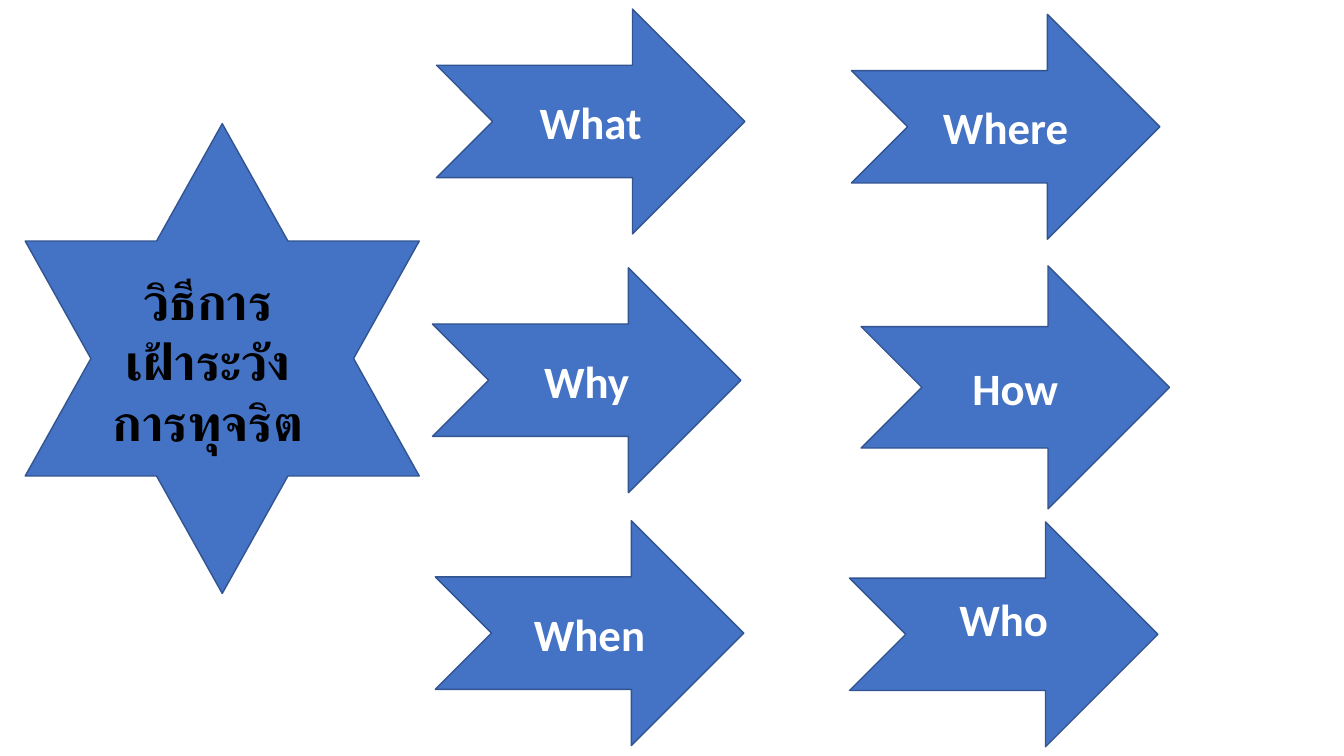
import pptx
import pptx.util
import pptx.dml.color
import pptx.enum.shapes
import pptx.enum.text
from dataclasses import dataclass

Pt = pptx.util.Pt
RGB = pptx.dml.color.RGBColor
Preset = pptx.enum.shapes.MSO_SHAPE
Align = pptx.enum.text.PP_ALIGN
Anchor = pptx.enum.text.MSO_ANCHOR


@dataclass(frozen=True)
class Theme:
    fill: RGB = RGB(0x44, 0x72, 0xC4)
    outline: RGB = RGB(0x32, 0x54, 0x91)
    topic: RGB = RGB(0, 0, 0)
    question: RGB = RGB(255, 255, 255)
    font: str = "Calibri"
    topic_size: float = 36
    question_size: float = 32
    line_width: float = 1


THEME = Theme()
ARROW_WIDTH, ARROW_HEIGHT = 220.3, 160.6
TOPIC_LINES = ["วิธีการ", "เฝ้าระวัง", "การทุจริต"]
STAR_BOX = (18, 88.3, 281.5, 335.6)
QUESTIONS = [
    ("When", 311, 372, ARROW_HEIGHT, 3.6),
    ("What", 311.8, 6.5, ARROW_HEIGHT, 3.6),
    ("Why", 308.9, 191.3, ARROW_HEIGHT, 3.6),
    ("Where", 608.2, 10.3, ARROW_HEIGHT, 3.6),
    ("How", 615.1, 189.9, 173.5, 3.6),
    ("Who", 606.8, 372.8, ARROW_HEIGHT, 25.6),
]


def apply(target, values):
    for attribute, value in values.items():
        setattr(target, attribute, value)


def draw_outline(slide, preset, box):
    figure = slide.shapes.add_shape(preset, *map(Pt, box))
    figure.shadow.inherit = False
    figure.fill.solid()
    figure.fill.fore_color.rgb = THEME.fill
    figure.line.color.rgb = THEME.outline
    figure.line.width = Pt(THEME.line_width)
    return figure


def write_lines(frame, lines, size, color):
    for index, line in enumerate(lines):
        paragraph = frame.add_paragraph() if index else frame.paragraphs[0]
        paragraph.alignment = Align.CENTER
        run = paragraph.add_run()
        run.text = line
        apply(run.font, {"name": THEME.font, "size": Pt(size), "bold": True})
        run.font.color.rgb = color


def draw_topic(slide, box):
    left, top, width, height = box
    draw_outline(slide, Preset.STAR_6_POINT, box)
    topic = slide.shapes.add_textbox(Pt(left + 44.6), Pt(top + 101), Pt(172), Pt(138.2))
    apply(topic.text_frame, {
        "word_wrap": True,
        "auto_size": pptx.enum.text.MSO_AUTO_SIZE.SHAPE_TO_FIT_TEXT,
    })
    write_lines(topic.text_frame, TOPIC_LINES, THEME.topic_size, THEME.topic)


def draw_question(slide, question, box, bottom_inset):
    arrow = draw_outline(slide, Preset.NOTCHED_RIGHT_ARROW, box)
    apply(arrow.text_frame, {
        "word_wrap": True,
        "vertical_anchor": Anchor.MIDDLE,
        "margin_bottom": Pt(bottom_inset),
    })
    write_lines(arrow.text_frame, [question], THEME.question_size, THEME.question)


def main():
    deck = pptx.Presentation()
    apply(deck, {"slide_width": Pt(960), "slide_height": Pt(540)})
    slide = deck.slides.add_slide(deck.slide_layouts[6])
    draw_topic(slide, STAR_BOX)
    for question, left, top, height, bottom_inset in QUESTIONS:
        draw_question(slide, question, (left, top, ARROW_WIDTH, height), bottom_inset)
    deck.save("out.pptx")


if __name__ == "__main__":
    main()
